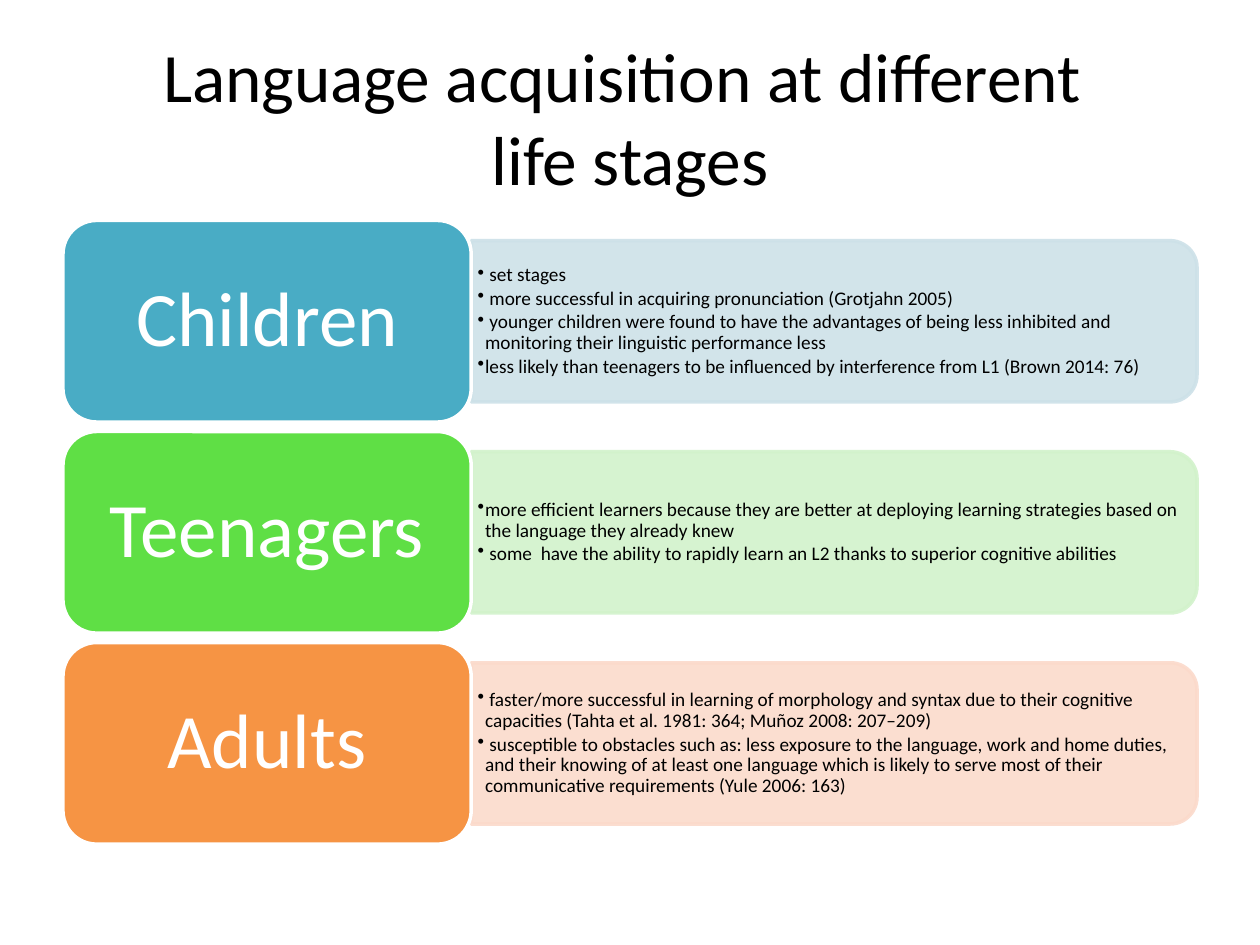
from lxml import etree
from pptx import Presentation
from pptx.dml.color import RGBColor
from pptx.enum.shapes import MSO_SHAPE
from pptx.enum.text import MSO_ANCHOR, PP_ALIGN
from pptx.oxml.ns import qn
from pptx.util import Inches, Pt

ROUNDED = MSO_SHAPE.ROUNDED_RECTANGLE
ROUNDED_TOP = MSO_SHAPE.ROUND_2_SAME_RECTANGLE
MIDDLE = MSO_ANCHOR.MIDDLE
CENTER = PP_ALIGN.CENTER
LEFT = PP_ALIGN.LEFT

# Grid of 100 columns by 75 rows, each a tenth of an inch
COLUMNS, ROWS = 100, 75
STAGE_TOP, STAGE_HEIGHT, STAGE_PITCH = 17.5, 16, 16.75
LABEL_LEFT, LABEL_WIDTH = 5, 32.4
PANEL_LEFT, PANEL_WIDTH, PANEL_HEIGHT = 37.4, 57.6, 12.8
POINTS_WIDTH, POINTS_HEIGHT = 57, 11.5

TITLE = "Language acquisition at different \vlife stages"
STAGES = [
    ("Children", "49ACC5", "CDE1E8", [
        " set stages",
        " more successful in acquiring pronunciation (Grotjahn 2005)",
        " younger children were found to have the advantages of being less "
        "inhibited and monitoring their linguistic performance less",
        "less likely than teenagers to be influenced by interference from L1 "
        "(Brown 2014: 76)",
    ]),
    ("Teenagers", "5FDF45", "D2F2CB", [
        "more efficient learners because they are better at deploying learning "
        "strategies based on the language they already knew",
        " some  have the ability to rapidly learn an L2 thanks to superior "
        "cognitive abilities",
    ]),
    ("Adults", "F69444", "FBDACB", [
        " faster/more successful in learning of morphology and syntax due to "
        "their cognitive capacities (Tahta et al. 1981: 364; Muñoz 2008: 207–209)",
        " susceptible to obstacles such as: less exposure to the language, work "
        "and home duties, and their knowing of at least one language which is "
        "likely to serve most of their communicative requirements "
        "(Yule 2006: 163)",
    ]),
]


def color(hex_string):
    return RGBColor.from_string(hex_string)


def set_attributes(target, values):
    for name, value in values.items():
        setattr(target, name, value)


class SlideBuilder:
    font_name = "Calibri"
    corner = 0.167
    line_width = Pt(2)

    def __init__(self, presentation):
        self.column = presentation.slide_width / COLUMNS
        self.row = presentation.slide_height / ROWS
        self.slide = presentation.slides.add_slide(presentation.slide_layouts[6])

    def place(self, left, top, width, height):
        return (round(left * self.column), round(top * self.row),
                round(width * self.column), round(height * self.row))

    def frame(self, shape, side, edge):
        set_attributes(shape.text_frame, {
            "word_wrap": True, "vertical_anchor": MIDDLE,
            "margin_left": Inches(side), "margin_right": Inches(side),
            "margin_top": Inches(edge), "margin_bottom": Inches(edge),
        })
        return shape.text_frame

    def fill_paragraph(self, paragraph, text, size, ink="000000", **formats):
        paragraph.text = text
        set_attributes(paragraph, formats)
        set_attributes(paragraph.font, {"name": self.font_name, "size": Pt(size)})
        paragraph.font.color.rgb = color(ink)

    def box(self, kind, area, fill, line, adjustments):
        shape = self.slide.shapes.add_shape(kind, *self.place(*area))
        shape.shadow.inherit = False
        shape.fill.solid()
        shape.fill.fore_color.rgb = color(fill)
        shape.line.color.rgb = color(line)
        shape.line.width = self.line_width
        for index, value in enumerate(adjustments):
            shape.adjustments[index] = value
        return shape

    def title(self, text, area):
        shape = self.slide.shapes.add_textbox(*self.place(*area))
        paragraph = self.frame(shape, 0.1, 0.05).paragraphs[0]
        self.fill_paragraph(paragraph, text, 39.6, alignment=CENTER)

    def label(self, text, area, fill):
        shape = self.box(ROUNDED, area, fill, "FFFFFF", [self.corner])
        paragraph = self.frame(shape, 0.18, 0.09).paragraphs[0]
        self.fill_paragraph(paragraph, text, 44, "FFFFFF",
                            alignment=CENTER, line_spacing=0.9)

    def panel(self, left, middle, width, height, fill):
        # Drawn upright about its centre, then turned so the round end faces right
        area = (left + (width - height) / 2, middle - width / 2, height, width)
        shape = self.box(ROUNDED_TOP, area, fill, fill, [self.corner, 0])
        shape.rotation = 90
        for solid in shape.element.spPr.iter(qn("a:solidFill")):
            etree.SubElement(solid[0], qn("a:alpha"), val="89000")

    def points(self, texts, area):
        shape = self.slide.shapes.add_textbox(*self.place(*area))
        text_frame = self.frame(shape, 0.05, 0.02)
        for index, text in enumerate(texts):
            paragraph = text_frame.add_paragraph() if index else text_frame.paragraphs[0]
            properties = paragraph._p.get_or_add_pPr()
            properties.set("marL", str(Inches(0.06)))
            properties.set("indent", str(Inches(-0.08)))
            etree.SubElement(properties, qn("a:buChar"), char="•")
            self.fill_paragraph(paragraph, text, 11, level=1, alignment=LEFT,
                                line_spacing=0.9,
                                space_before=Pt(1.6 if index else 0))


def main():
    presentation = Presentation()
    presentation.slide_width = Inches(10)
    presentation.slide_height = Inches(7.5)
    builder = SlideBuilder(presentation)

    builder.title(TITLE, (5, 3, 90, 12.5))

    # One band per life stage: panel, its points, then the label
    for index, (name, strong, pale, texts) in enumerate(STAGES):
        top = STAGE_TOP + index * STAGE_PITCH
        middle = top + STAGE_HEIGHT / 2
        builder.panel(PANEL_LEFT, middle, PANEL_WIDTH, PANEL_HEIGHT, pale)
        builder.points(texts, (PANEL_LEFT, middle - POINTS_HEIGHT / 2,
                               POINTS_WIDTH, POINTS_HEIGHT))
        builder.label(name, (LABEL_LEFT, top, LABEL_WIDTH, STAGE_HEIGHT), strong)

    presentation.save("out.pptx")


if __name__ == "__main__":
    main()
